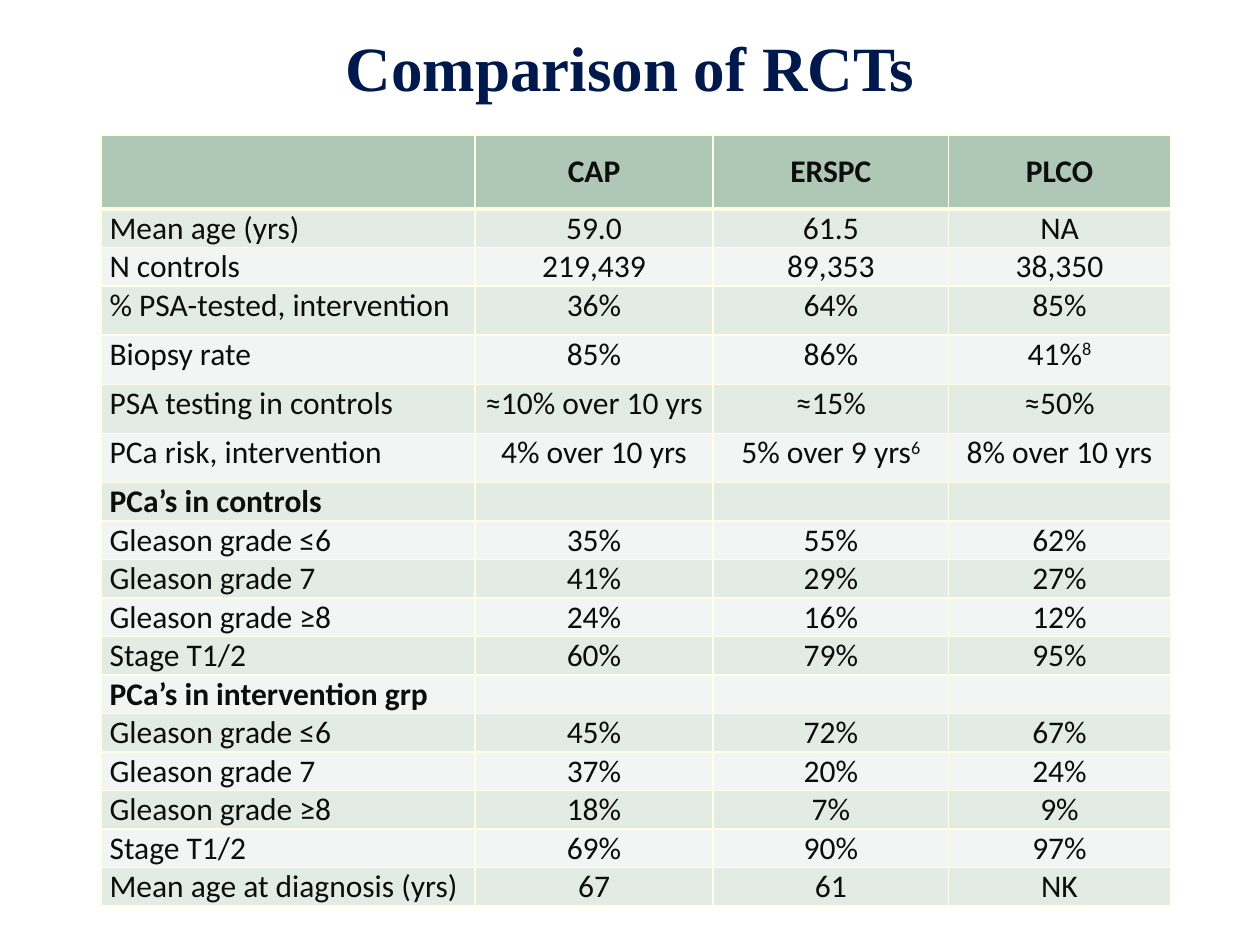
from lxml import etree
from pptx import Presentation
from pptx.dml.color import RGBColor
from pptx.enum import text
from pptx.oxml import ns
from pptx.util import Inches, Pt

# Content: a (text, superscript) pair marks a raised reference number
TITLE = "Comparison of RCTs"
ROWS = [
    ("", "CAP", "ERSPC", "PLCO"),
    ("Mean age (yrs)", "59.0", "61.5", "NA"),
    ("N controls", "219,439", "89,353", "38,350"),
    ("% PSA-tested, intervention", "36%", "64%", "85%"),
    ("Biopsy rate", "85%", "86%", ("41%", "8")),
    ("PSA testing in controls", "≈10% over 10 yrs", "≈15%", "≈50%"),
    ("PCa risk, intervention", "4% over 10 yrs", ("5% over 9 yrs", "6"), "8% over 10 yrs"),
    ("PCa’s in controls", "", "", ""),
    ("Gleason grade ≤6", "35%", "55%", "62%"),
    ("Gleason grade 7", "41%", "29%", "27%"),
    ("Gleason grade ≥8", "24%", "16%", "12%"),
    ("Stage T1/2", "60%", "79%", "95%"),
    ("PCa’s in intervention grp", "", "", ""),
    ("Gleason grade ≤6", "45%", "72%", "67%"),
    ("Gleason grade 7", "37%", "20%", "24%"),
    ("Gleason grade ≥8", "18%", "7%", "9%"),
    ("Stage T1/2", "69%", "90%", "97%"),
    ("Mean age at diagnosis (yrs)", "67", "61", "NK"),
]
COL_WIDTHS = (2.97, 1.89, 1.87, 1.76)
HEADER_H, TALL_H, ROW_H = 0.59, 0.39, 0.29
TALL_ROWS = range(3, 7)
HEADER_FILL, BANDS, BORDER = "AFC7B5", ("F2F5F3", "E3EBE5"), "FFFFE7"


def color(hex_value):
    return RGBColor.from_string(hex_value)


def format_run(r, font, size, hex_value, bold):
    r.font.name, r.font.size, r.font.bold = font, Pt(size), bold
    r.font.color.rgb = color(hex_value)


def add_border(cell, side, width):
    ln = etree.SubElement(cell._tc.get_or_add_tcPr(), ns.qn(f"a:ln{side}"), w=str(Pt(width)))
    fill = etree.SubElement(ln, ns.qn("a:solidFill"))
    etree.SubElement(fill, ns.qn("a:srgbClr"), val=BORDER)


def fill_cell(cell, value, row, col, bold):
    header = row == 0
    cell.margin_left = cell.margin_right = Inches(0.07)
    cell.margin_top = cell.margin_bottom = 0
    cell.vertical_anchor = text.MSO_ANCHOR.MIDDLE if header else text.MSO_ANCHOR.TOP
    for side in "LRTB":
        under_header = (row, side) in ((0, "B"), (1, "T"))
        add_border(cell, side, 3 if under_header else 1)
    cell.fill.solid()
    cell.fill.fore_color.rgb = color(HEADER_FILL if header else BANDS[row % 2])

    p = cell.text_frame.paragraphs[0]
    p.alignment = text.PP_ALIGN.CENTER if col else text.PP_ALIGN.LEFT
    parts = value if isinstance(value, tuple) else (value,)
    for i, part in enumerate(parts):
        if part:
            r = p.add_run()
            r.text = part
            format_run(r, "Calibri", 18, "0D0D0D", bold)
            if i:
                r._r.get_or_add_rPr().set("baseline", "30000")


prs = Presentation()
prs.slide_width, prs.slide_height = Inches(10), Inches(7.5)
s = prs.slides.add_slide(prs.slide_layouts[5])

# Title
title = s.shapes.title
title.left, title.top, title.width, title.height = map(Inches, (0.75, 0.2, 8.5, 0.66))
tf = title.text_frame
tf.text = TITLE
tf.vertical_anchor = text.MSO_ANCHOR.MIDDLE
p = tf.paragraphs[0]
p.alignment = text.PP_ALIGN.CENTER
format_run(p.runs[0], "Times New Roman", 36, "00194C", True)

# Comparison table
heights = [HEADER_H] + [TALL_H if i in TALL_ROWS else ROW_H for i in range(1, len(ROWS))]
table = s.shapes.add_table(len(ROWS), len(COL_WIDTHS), Inches(0.8), Inches(1.07),
                           Inches(sum(COL_WIDTHS)), Inches(sum(heights))).table
for column, width in zip(table.columns, COL_WIDTHS):
    column.width = Inches(width)
for i, (values, height) in enumerate(zip(ROWS, heights)):
    table.rows[i].height = Inches(height)
    bold = i == 0 or not any(values[1:])  # header and section rows
    for j, value in enumerate(values):
        fill_cell(table.cell(i, j), value, i, j, bold)

prs.save("out.pptx")
